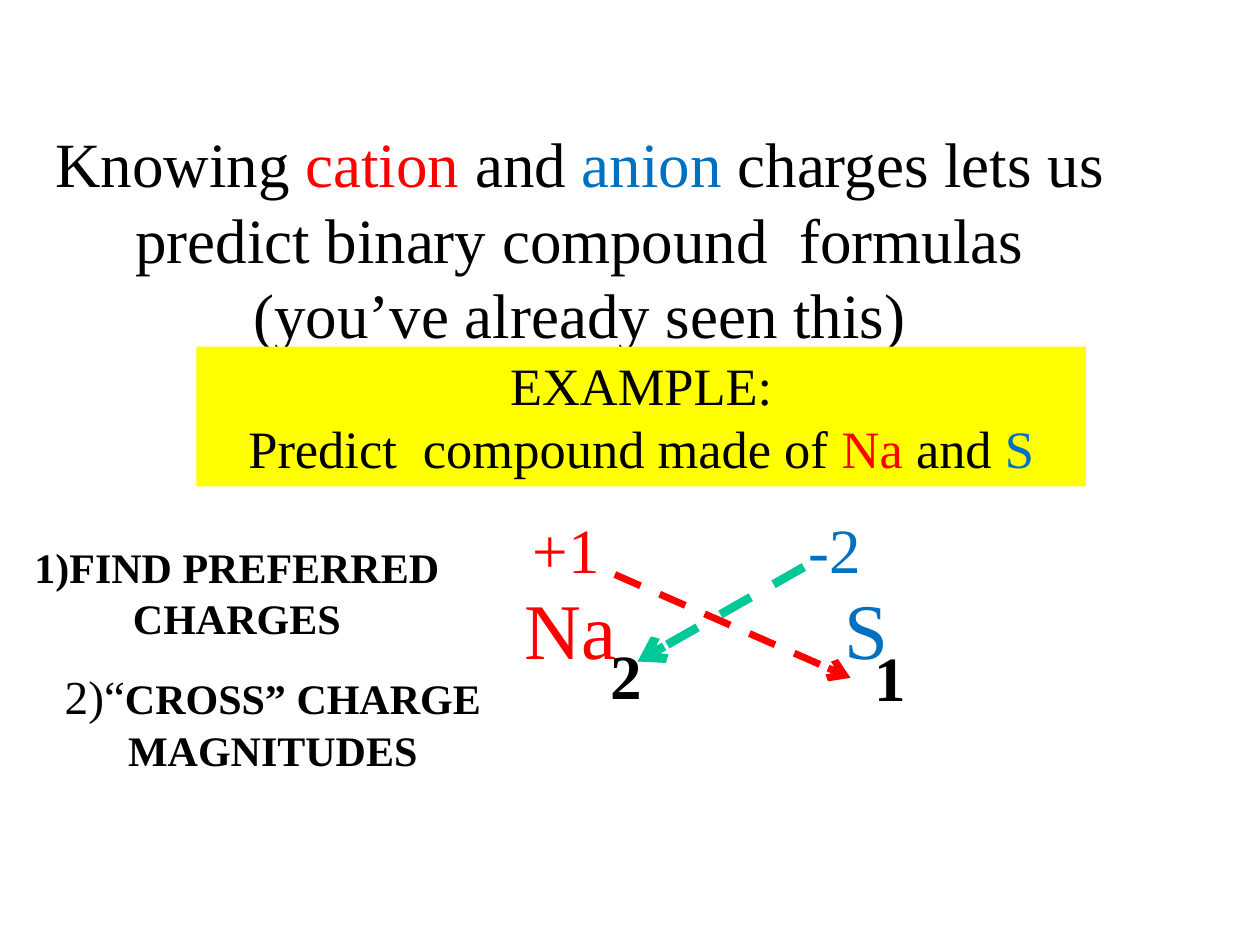
from lxml import etree
from pptx import Presentation
from pptx.dml.color import RGBColor
from pptx.enum import dml, shapes, text
from pptx.oxml import ns
from pptx.util import Inches, Pt

FONT = "Times New Roman"
COLORS = {
    "ink": "000000",
    "cation": "FF0000",
    "anion": "0070C0",
    "cross": "00C896",
    "banner": "FFFF00",
}


def rgb(name):
    return RGBColor.from_string(COLORS[name])


def add_span(para, wording, size=36, color="ink", bold=False):
    span = para.add_run()
    span.text = wording
    span.font.name = FONT
    span.font.size = Pt(size)
    span.font.bold = bold
    span.font.color.rgb = rgb(color)


def write_lines(box, lines):
    frame = box.text_frame
    frame.word_wrap = True
    frame.auto_size = text.MSO_AUTO_SIZE.NONE
    frame.vertical_anchor = text.MSO_ANCHOR.TOP
    for index, spans in enumerate(lines):
        para = frame.add_paragraph() if index else frame.paragraphs[0]
        para.alignment = text.PP_ALIGN.CENTER
        for wording, style in spans:
            add_span(para, wording, **style)


def add_title(page, spans):
    title = page.shapes.title
    title.left, title.top = Inches(0.33), Inches(0.94)
    title.width, title.height = Inches(8.54), Inches(1.92)
    write_lines(title, [spans])


def add_label(page, place, *spans):
    box = page.shapes.add_textbox(*map(Inches, place))
    write_lines(box, [spans])


def add_banner(page, place, lines):
    banner = page.shapes.add_shape(shapes.MSO_SHAPE.RECTANGLE, *map(Inches, place))
    banner.shadow.inherit = False
    banner.fill.solid()
    banner.fill.fore_color.rgb = rgb("banner")
    banner.line.fill.background()
    write_lines(banner, lines)


def add_dashed_arrow(page, start, end, color, width):
    arrow = page.shapes.add_connector(
        shapes.MSO_CONNECTOR.STRAIGHT, *map(Inches, start + end)
    )
    arrow.line.color.rgb = rgb(color)
    arrow.line.width = Pt(width)
    arrow.line.dash_style = dml.MSO_LINE.DASH
    etree.SubElement(arrow.line._get_or_add_ln(), ns.qn("a:tailEnd"), type="arrow")
    etree.SubElement(arrow._element.spPr, ns.qn("a:effectLst"))


def main():
    deck = Presentation()
    deck.slide_width, deck.slide_height = Inches(10), Inches(7.5)
    page = deck.slides.add_slide(deck.slide_layouts.get_by_name("Title Only"))

    add_title(page, [
        ("Knowing ", {}),
        ("cation", {"color": "cation"}),
        (" and ", {}),
        ("anion", {"color": "anion"}),
        (" charges lets us predict binary compound  formulas (you’ve already seen this)", {}),
    ])

    add_label(page, (4.06, 4.56, 0.94, 0.86), ("Na", {"size": 45, "color": "cation"}))
    add_label(page, (6.44, 4.56, 0.88, 0.86), ("S", {"size": 45, "color": "anion"}))
    add_label(page, (4.12, 4, 0.75, 0.71), ("+1", {"color": "cation"}))
    add_label(page, (6.25, 4, 0.75, 0.71), ("-2", {"color": "anion"}))

    add_banner(page, (1.56, 2.75, 7.06, 1.11), [
        [("EXAMPLE:", {"size": 30})],
        [
            ("Predict  compound made of ", {"size": 30}),
            ("Na", {"size": 30, "color": "cation"}),
            (" and ", {"size": 30}),
            ("S", {"size": 30, "color": "anion"}),
        ],
    ])

    step = {"size": 24, "bold": True}
    add_label(page, (0.16, 4.25, 3.44, 0.91), ("1)FIND PREFERRED CHARGES", step))
    add_label(
        page, (-0.17, 5.25, 4.67, 0.96),
        ("2)“", {"size": 27}), ("CROSS” CHARGE MAGNITUDES", step),
    )

    add_dashed_arrow(page, (4.88, 4.56), (6.75, 5.38), "cation", 4)
    add_label(page, (6.84, 5.02, 0.44, 0.71), ("1", {"bold": True}))
    add_dashed_arrow(page, (6.38, 4.5), (5.06, 5.25), "cross", 5)
    add_label(page, (4.75, 5, 0.38, 0.71), ("2", {"bold": True}))

    deck.save("out.pptx")


if __name__ == "__main__":
    main()
